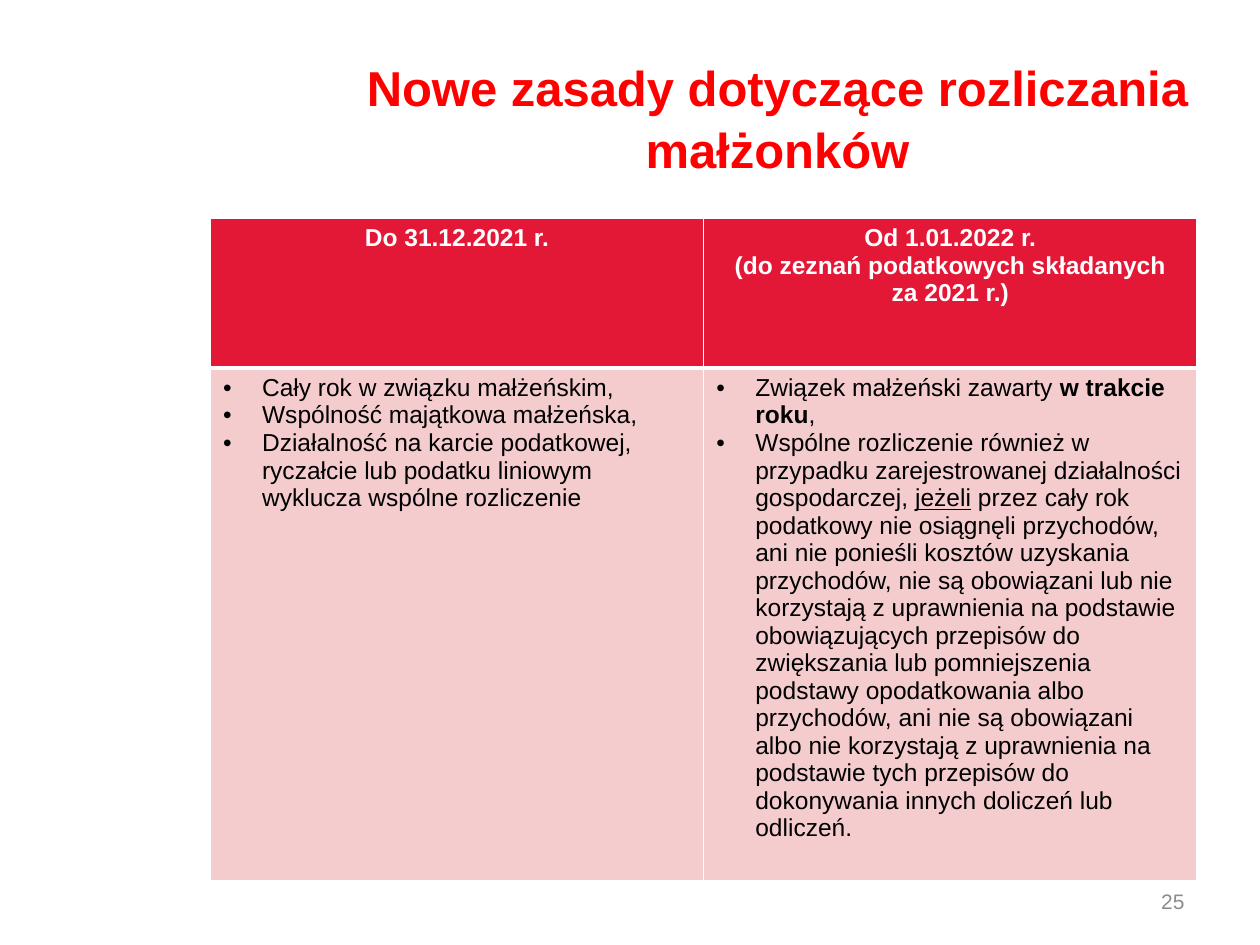
from lxml import etree
from pptx import Presentation
from pptx.dml.color import RGBColor
from pptx.enum.text import MSO_ANCHOR as Anchor, PP_ALIGN as Align
from pptx.oxml.ns import qn
from pptx.util import Inches, Pt

COLORS = {
    "title": "FF0000",
    "header": "E31837",
    "body": "F4CCCE",
    "white": "FFFFFF",
    "black": "000000",
    "number": "8C8C8C",
}
HEADERS = [
    ["Do 31.12.2021 r."],
    ["Od 1.01.2022 r.", "(do zeznań podatkowych składanych", "za 2021 r.)"],
]
RULES = [
    [
        [("Cały rok w związku małżeńskim,", {})],
        [("Wspólność majątkowa małżeńska,", {})],
        [("Działalność na karcie podatkowej, ryczałcie lub podatku liniowym "
          "wyklucza wspólne rozliczenie", {})],
    ],
    [
        [("Związek małżeński zawarty ", {}), ("w trakcie roku", {"bold": True}), (",", {})],
        [("Wspólne rozliczenie również w przypadku zarejestrowanej działalności "
          "gospodarczej, ", {}),
         ("jeżeli", {"underline": True}),
         (" przez cały rok podatkowy nie osiągnęli przychodów, ani nie ponieśli "
          "kosztów uzyskania przychodów, nie są obowiązani lub nie korzystają z "
          "uprawnienia na podstawie obowiązujących przepisów do zwiększania lub "
          "pomniejszenia podstawy opodatkowania albo przychodów, ani nie są "
          "obowiązani albo nie korzystają z uprawnienia na podstawie tych przepisów "
          "do dokonywania innych doliczeń lub odliczeń.", {})],
    ],
]


def add_run(p, text, size=14, color="black", bold=False, underline=False):
    r = p.add_run()
    r.text = text
    r.font.name = "Arial"
    r.font.size = Pt(size)
    r.font.bold = bold
    r.font.underline = underline
    r.font.color.rgb = RGBColor.from_string(COLORS[color])


def add_text(s, box, text, align, spacing=1.0, **fmt):
    tf = s.shapes.add_textbox(*map(Inches, box)).text_frame
    tf.word_wrap = True
    tf.vertical_anchor = Anchor.MIDDLE
    p = tf.paragraphs[0]
    p.alignment = align
    p.line_spacing = spacing
    add_run(p, text, **fmt)


def add_bullet(p):
    pPr = p._p.get_or_add_pPr()
    pPr.set("marL", str(Inches(0.31)))
    pPr.set("indent", str(-Inches(0.31)))
    etree.SubElement(pPr, qn("a:buFont")).set("typeface", "Arial")
    etree.SubElement(pPr, qn("a:buChar")).set("char", "•")


def set_cell(cell, fill, bottom=1, top=1):
    tcPr = cell._tc.get_or_add_tcPr()
    for side, width in (("L", 1), ("R", 1), ("T", top), ("B", bottom)):
        ln = etree.SubElement(tcPr, qn(f"a:ln{side}"), w=str(Pt(width)))
        solid = etree.SubElement(ln, qn("a:solidFill"))
        etree.SubElement(solid, qn("a:srgbClr"), val=COLORS["white"])
    cell.fill.solid()
    cell.fill.fore_color.rgb = RGBColor.from_string(COLORS[fill])


def cell_paragraphs(cell, items):
    tf = cell.text_frame
    for i, item in enumerate(items):
        yield (tf.add_paragraph() if i else tf.paragraphs[0]), item


def add_rules_table(s, box, header_height):
    left, top, width, height = map(Inches, box)
    table = s.shapes.add_table(2, len(HEADERS), left, top, width, height).table
    table.rows[0].height = Inches(header_height)
    table.rows[1].height = height - Inches(header_height)
    for col, (header, rules) in enumerate(zip(HEADERS, RULES)):
        head, body = table.cell(0, col), table.cell(1, col)
        set_cell(head, "header", bottom=3)
        set_cell(body, "body", top=3)
        for p, line in cell_paragraphs(head, header):
            p.alignment = Align.CENTER
            add_run(p, line, color="white", bold=True)
        for p, runs in cell_paragraphs(body, rules):
            add_bullet(p)
            for text, fmt in runs:
                add_run(p, text, **fmt)


def main():
    prs = Presentation()
    prs.slide_width, prs.slide_height = Inches(10), Inches(7.5)
    s = prs.slides.add_slide(prs.slide_layouts[6])
    add_text(s, (2.34, 0.3, 7.66, 1.25), "Nowe zasady dotyczące rozliczania małżonków",
             Align.CENTER, spacing=1.05, size=28, color="title", bold=True)
    add_rules_table(s, (1.67, 1.73, 7.83, 5.22), 1.19)
    add_text(s, (7.17, 6.95, 2.33, 0.4), "25", Align.RIGHT, size=12, color="number")
    prs.save("out.pptx")


if __name__ == "__main__":
    main()
